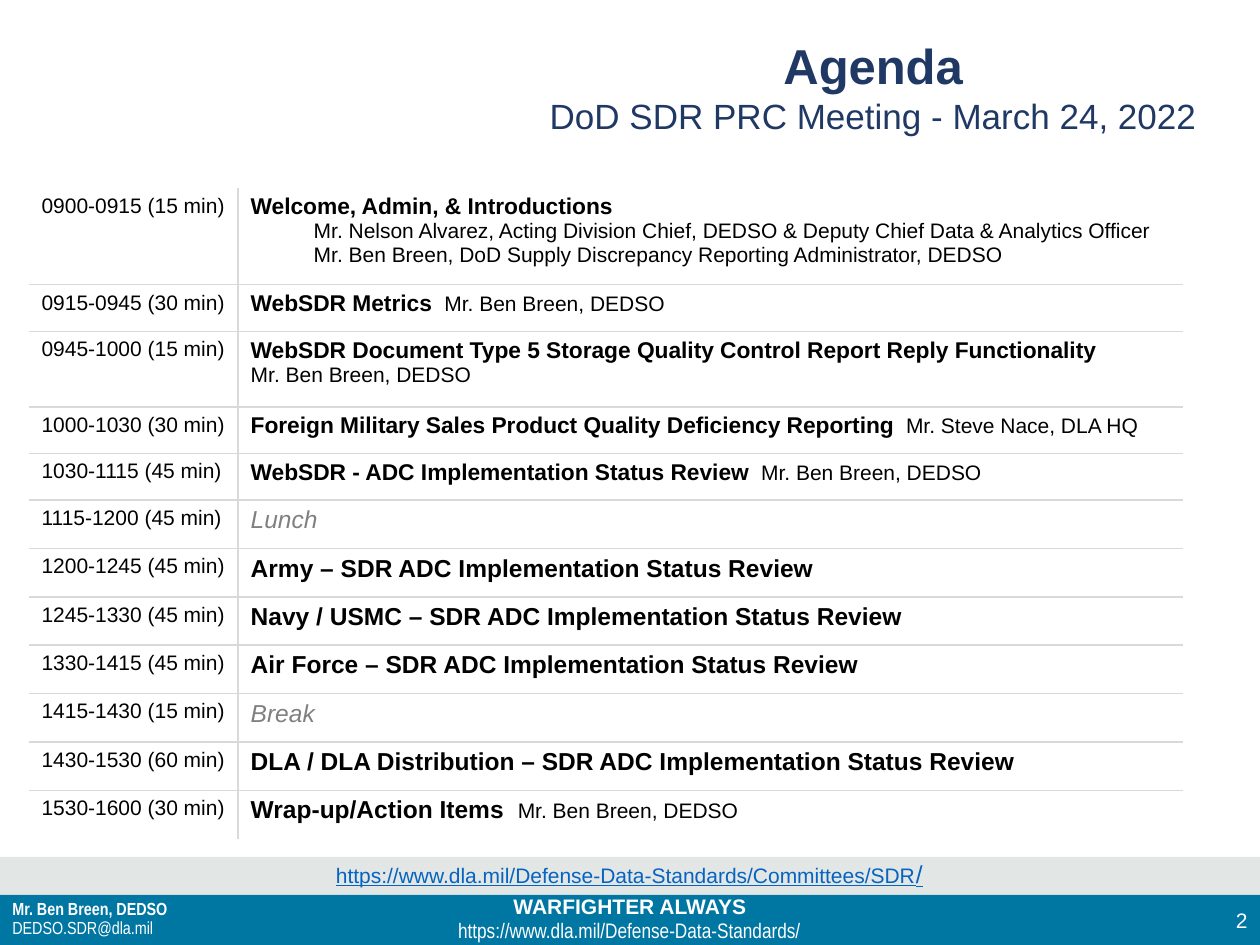
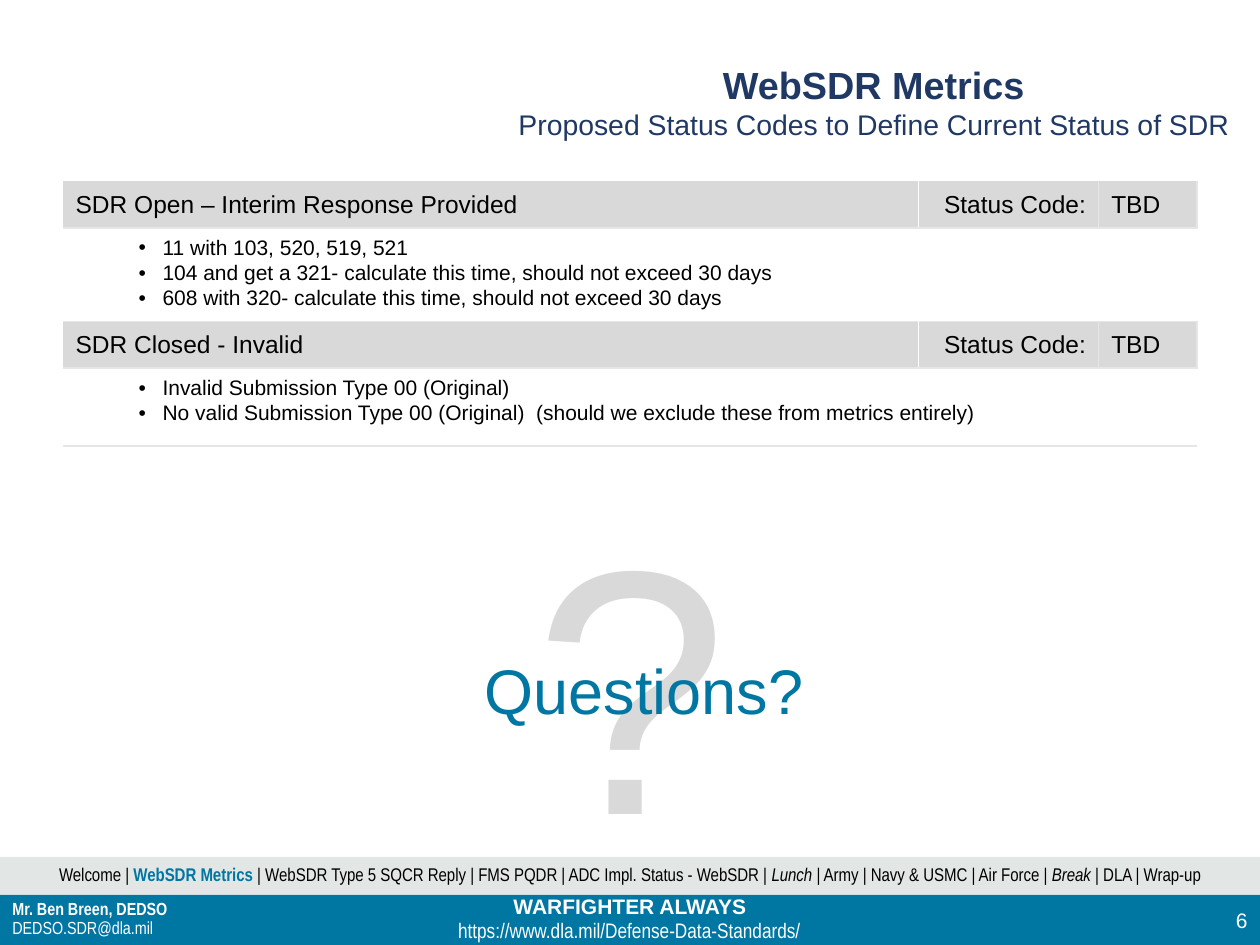
from lxml import etree
from pptx import Presentation
from pptx import util as u
from pptx.dml.color import RGBColor
from pptx.enum import shapes, text
from pptx.oxml import ns

TEAL, NAVY, BAND = "0076A3", "203864", "E2E6E5"
RULE, PALE_RULE, GREY = "D9D9D9", "E7E6E6", "808080"
WHITE, BLACK, LINK = "FFFFFF", "000000", "0563C1"
LEFT, CENTER, RIGHT = text.PP_ALIGN.LEFT, text.PP_ALIGN.CENTER, text.PP_ALIGN.RIGHT
TOP, MIDDLE = text.MSO_ANCHOR.TOP, text.MSO_ANCHOR.MIDDLE
PLAIN_TABLE = "{2D5ABB26-0587-4C30-8999-92F81FD0307C}"

BODY = {"name": "Arial", "size": 12, "color": BLACK}
FOOTER = {"name": "Arial", "size": 12, "color": WHITE}
NARROW = {"name": "Arial Narrow", "size": 10, "color": WHITE}
TRAIL = {"name": "Arial Narrow", "size": 10.5, "color": BLACK}
TOPIC = {"size": 13, "bold": True}
REVIEW = {"size": 14, "bold": True}
PAUSE = {"size": 14, "italic": True, "color": GREY}

BREEN = "Mr. Ben Breen, DEDSO"
SITE = "https://www.dla.mil/Defense-Data-Standards/"

# Each row: time, height, paragraphs; a paragraph is a list of (text, format) runs.
AGENDA = [
    ("0900-0915 (15 min)", 0.77, [
        [("Welcome, Admin, & Introductions", TOPIC)],
        [("Mr. Nelson Alvarez, Acting Division Chief, DEDSO & Deputy Chief Data & Analytics Officer", {})],
        [("Mr. Ben Breen, DoD Supply Discrepancy Reporting Administrator, DEDSO", {})]]),
    ("0915-0945 (30 min)", 0.37, [[("WebSDR Metrics  ", TOPIC), (BREEN, {})]]),
    ("0945-1000 (15 min)", 0.6, [
        [("WebSDR Document Type 5 Storage Quality Control Report Reply Functionality", TOPIC)],
        [(BREEN, {})]]),
    ("1000-1030 (30 min)", 0.37, [
        [("Foreign Military Sales Product Quality Deficiency Reporting  ", TOPIC),
         ("Mr. Steve Nace, DLA HQ", {})]]),
    ("1030-1115 (45 min)", 0.37, [
        [("WebSDR - ADC Implementation Status Review  ", TOPIC), (BREEN, {})]]),
    ("1115-1200 (45 min)", 0.37, [[("Lunch", PAUSE)]]),
    ("1200-1245 (45 min)", 0.37, [[("Army – SDR ADC Implementation Status Review", REVIEW)]]),
    ("1245-1330 (45 min)", 0.37, [[("Navy / USMC – SDR ADC Implementation Status Review", REVIEW)]]),
    ("1330-1415 (45 min)", 0.37, [[("Air Force – SDR ADC Implementation Status Review", REVIEW)]]),
    ("1415-1430 (15 min)", 0.37, [[("Break", PAUSE)]]),
    ("1430-1530 (60 min)", 0.37, [
        [("DLA / DLA Distribution – SDR ADC Implementation Status Review", REVIEW)]]),
    ("1530-1600 (30 min)", 0.37, [[("Wrap-up/Action Items  ", REVIEW), (BREEN, {})]]),
]

STATUS_GROUPS = [
    ("SDR Open – Interim Response Provided", 0.74, [
        "11 with 103, 520, 519, 521",
        "104 and get a 321- calculate this time, should not exceed 30 days",
        "608 with 320- calculate this time, should not exceed 30 days"]),
    ("SDR Closed - Invalid", 0.62, [
        "Invalid Submission Type 00 (Original)",
        "No valid Submission Type 00 (Original)  (should we exclude these from metrics entirely)"]),
]


def color(hex_string):
    return RGBColor.from_string(hex_string)


def format_font(font, values):
    for name, value in values.items():
        if name == "color":
            font.color.rgb = color(value)
        else:
            setattr(font, name, u.Pt(value) if name == "size" else value)


def write(frame, paragraphs, base, align=LEFT, spacing=None):
    """Fill a text frame; each run's format adds to the base format."""
    for index, runs in enumerate(paragraphs):
        paragraph = frame.paragraphs[0] if index == 0 else frame.add_paragraph()
        paragraph.alignment = align
        if spacing:
            paragraph.line_spacing = spacing
        for words, values in runs:
            run = paragraph.add_run()
            run.text = words
            format_font(run.font, {**base, **values})


def indent(paragraph, left, first=0.0, bullet=None):
    properties = paragraph._p.get_or_add_pPr()
    properties.set("marL", str(u.Inches(left)))
    properties.set("indent", str(u.Inches(first)))
    if bullet:
        etree.SubElement(properties, ns.qn("a:buFont"), typeface="Arial")
        etree.SubElement(properties, ns.qn("a:buChar"), char=bullet)


def add_text(slide, box, paragraphs, base, align=LEFT, anchor=TOP, spacing=None, wrap=True):
    frame = slide.shapes.add_textbox(*map(u.Inches, box)).text_frame
    frame.word_wrap = wrap
    frame.vertical_anchor = anchor
    write(frame, paragraphs, base, align, spacing)


def add_band(slide, top, height, fill):
    band = slide.shapes.add_shape(
        shapes.MSO_SHAPE.RECTANGLE, 0, u.Inches(top), u.Inches(10), u.Inches(height))
    band.shadow.inherit = False
    band.fill.solid()
    band.fill.fore_color.rgb = color(fill)
    band.line.fill.background()


def set_title(slide, box, heading, heading_size, subtitle, subtitle_size):
    title = slide.shapes.title
    title.left, title.top, title.width, title.height = map(u.Inches, box)
    frame = title.text_frame
    frame.auto_size = text.MSO_AUTO_SIZE.NONE
    frame.vertical_anchor = TOP
    frame.margin_top = u.Inches(0.09)
    write(frame, [[(heading, {"size": heading_size, "bold": True})],
                  [(subtitle, {"size": subtitle_size, "bold": False})]],
          {"name": "Arial", "color": NAVY}, CENTER)


def add_footer(slide, number):
    add_band(slide, 7.1, 0.4, TEAL)
    add_band(slide, 6.8, 0.3, BAND)
    add_text(slide, (0, 7.04, 10, 0.3), [[("WARFIGHTER ALWAYS", {"bold": True})]], FOOTER, CENTER)
    add_text(slide, (3.37, 7.23, 3.25, 0.3), [[(SITE, {"size": 12})]], NARROW, CENTER)
    add_text(slide, (0, 7.1, 1.96, 0.4),
             [[(BREEN, {"bold": True})], [("DEDSO.SDR@dla.mil", {})]],
             NARROW, anchor=MIDDLE, spacing=0.9)
    add_text(slide, (9.5, 7.1, 0.5, 0.4), [[(str(number), {})]], FOOTER, RIGHT, MIDDLE)


def add_table(slide, left, top, columns, rows):
    table = slide.shapes.add_table(
        len(rows), len(columns), u.Inches(left), u.Inches(top),
        u.Inches(sum(columns)), u.Inches(sum(rows))).table
    table.first_row = table.horz_banding = False
    table._tbl.tblPr.find(ns.qn("a:tableStyleId")).text = PLAIN_TABLE
    for column, width in zip(table.columns, columns):
        column.width = u.Inches(width)
    for row, height in zip(table.rows, rows):
        row.height = u.Inches(height)
    return table


def style_cell(cell, borders, fill=None):
    """Draw borders given as {side letter: colour}, then set the fill."""
    properties = cell._tc.get_or_add_tcPr()
    for side in "LRTB":
        if side in borders:
            line = etree.SubElement(properties, ns.qn(f"a:ln{side}"), w=str(u.Pt(1)))
            solid = etree.SubElement(line, ns.qn("a:solidFill"))
            etree.SubElement(solid, ns.qn("a:srgbClr"), val=borders[side])
    if fill:
        cell.fill.solid()
        cell.fill.fore_color.rgb = color(fill)
    else:
        cell.fill.background()


def add_agenda(slide):
    table = add_table(slide, 0.23, 1.49, (1.66, 7.5), [height for _, height, _ in AGENDA])
    last = len(AGENDA) - 1
    for row, (time, _, topic) in enumerate(AGENDA):
        sides = ("T" if row else "") + ("B" if row < last else "")
        for column, paragraphs in enumerate(([[(time, {})]], topic)):
            cell = table.cell(row, column)
            cell.margin_bottom = u.Inches(0.1)
            write(cell.text_frame, paragraphs, BODY)
            style_cell(cell, dict.fromkeys(sides + "RL"[column], RULE))
    for speaker in table.cell(0, 1).text_frame.paragraphs[1:]:
        indent(speaker, 0.5)


def add_status_codes(slide):
    heights = [height for _, detail, _ in STATUS_GROUPS for height in (0.37, detail)]
    table = add_table(slide, 0.5, 1.44, (6.79, 1.43, 0.78), heights)
    level_rules = {"T": PALE_RULE, "B": PALE_RULE}
    header_rules = ({"R": WHITE}, {"L": WHITE, "R": PALE_RULE}, {"L": PALE_RULE, "R": PALE_RULE})
    for group, (status, _, conditions) in enumerate(STATUS_GROUPS):
        header, detail = 2 * group, 2 * group + 1
        labels = ((status, LEFT), ("Status Code:", RIGHT), ("TBD", LEFT))
        for column, (label, align) in enumerate(labels):
            cell = table.cell(header, column)
            cell.vertical_anchor = MIDDLE
            write(cell.text_frame, [[(label, {"size": 14})]], BODY, align)
            top_rule = {"T": PALE_RULE} if group else {}
            style_cell(cell, {**header_rules[column], **top_rule, "B": PALE_RULE}, RULE)
            style_cell(table.cell(detail, column), level_rules)
        merged = table.cell(detail, 0)
        merged.merge(table.cell(detail, 2))
        write(merged.text_frame, [[(condition, {})] for condition in conditions], BODY, spacing=1.07)
        for paragraph in merged.text_frame.paragraphs:
            indent(paragraph, 0.69, -0.19, "•")


def build_agenda_slide(slide):
    set_title(slide, (3.86, 0.19, 6.14, 1.15), "Agenda", 28,
              "DoD SDR PRC Meeting - March 24, 2022", 20)
    add_footer(slide, 2)
    add_agenda(slide)
    add_text(slide, (1, 6.77, 7.99, 0.34),
             [[(SITE + "Committees/SDR", {}), ("/", {"size": 14})]],
             {**BODY, "color": LINK, "underline": True}, CENTER)


def build_metrics_slide(slide):
    set_title(slide, (4, 0.4, 5.87, 0.9), "WebSDR Metrics", 21.6,
              "Proposed Status Codes to Define Current Status of SDR", 16.2)
    add_footer(slide, 6)
    add_text(slide, (4.14, 3.65, 1.73, 3.45), [[("?", {"size": 199, "color": RULE})]], BODY)
    add_status_codes(slide)
    add_text(slide, (3.75, 5.12, 2.75, 0.71),
             [[("Questions?", {"size": 36, "color": TEAL})]], BODY, wrap=False)
    add_text(slide, (0, 6.8, 10, 0.28), [[
        ("Welcome | ", {}),
        ("WebSDR Metrics ", {"bold": True, "color": TEAL}),
        ("| WebSDR Type 5 SQCR Reply | FMS PQDR | ADC Impl. Status - WebSDR | ", {}),
        ("Lunch ", {"italic": True}),
        ("| Army | Navy & USMC | Air Force | ", {}),
        ("Break ", {"italic": True}),
        ("| DLA | Wrap-up", {})]], TRAIL, CENTER)


def main():
    presentation = Presentation()
    presentation.slide_width, presentation.slide_height = u.Inches(10), u.Inches(7.5)
    title_only = presentation.slide_layouts[5]
    for build in (build_agenda_slide, build_metrics_slide):
        build(presentation.slides.add_slide(title_only))
    presentation.save("out.pptx")


if __name__ == "__main__":
    main()
